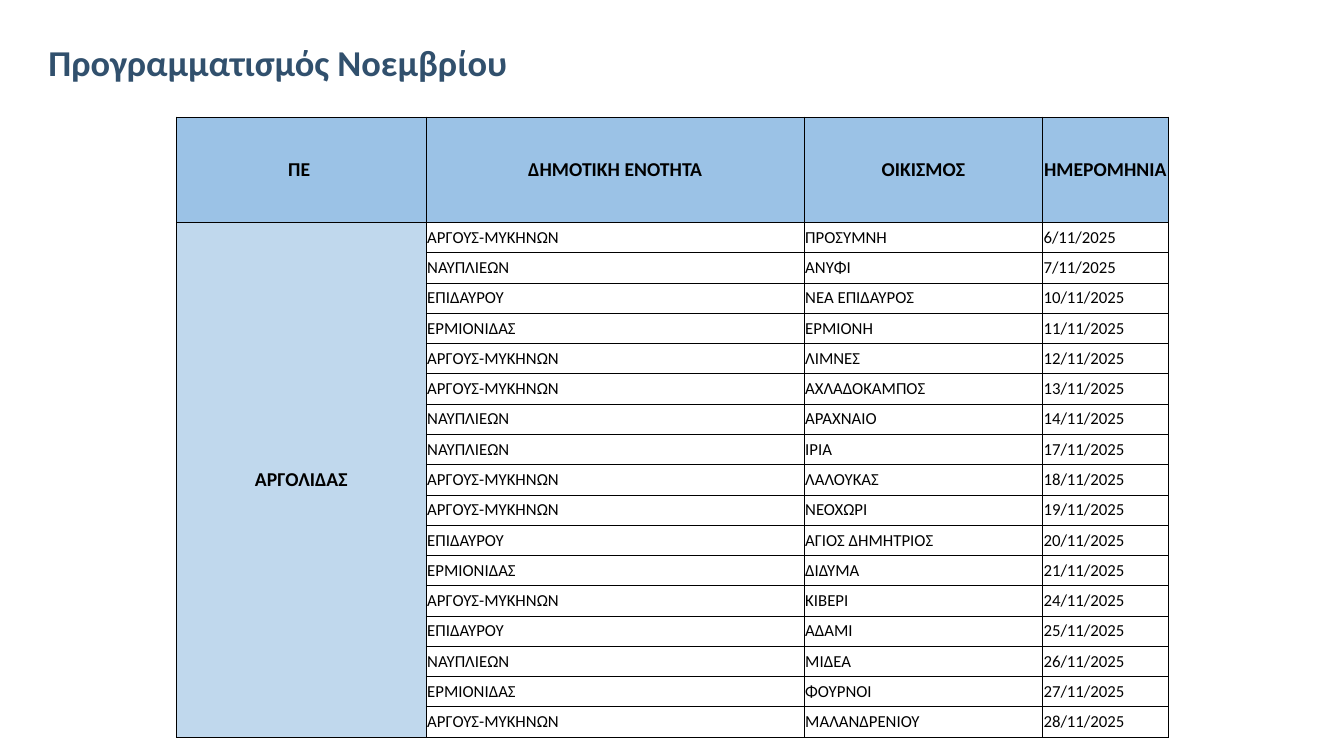
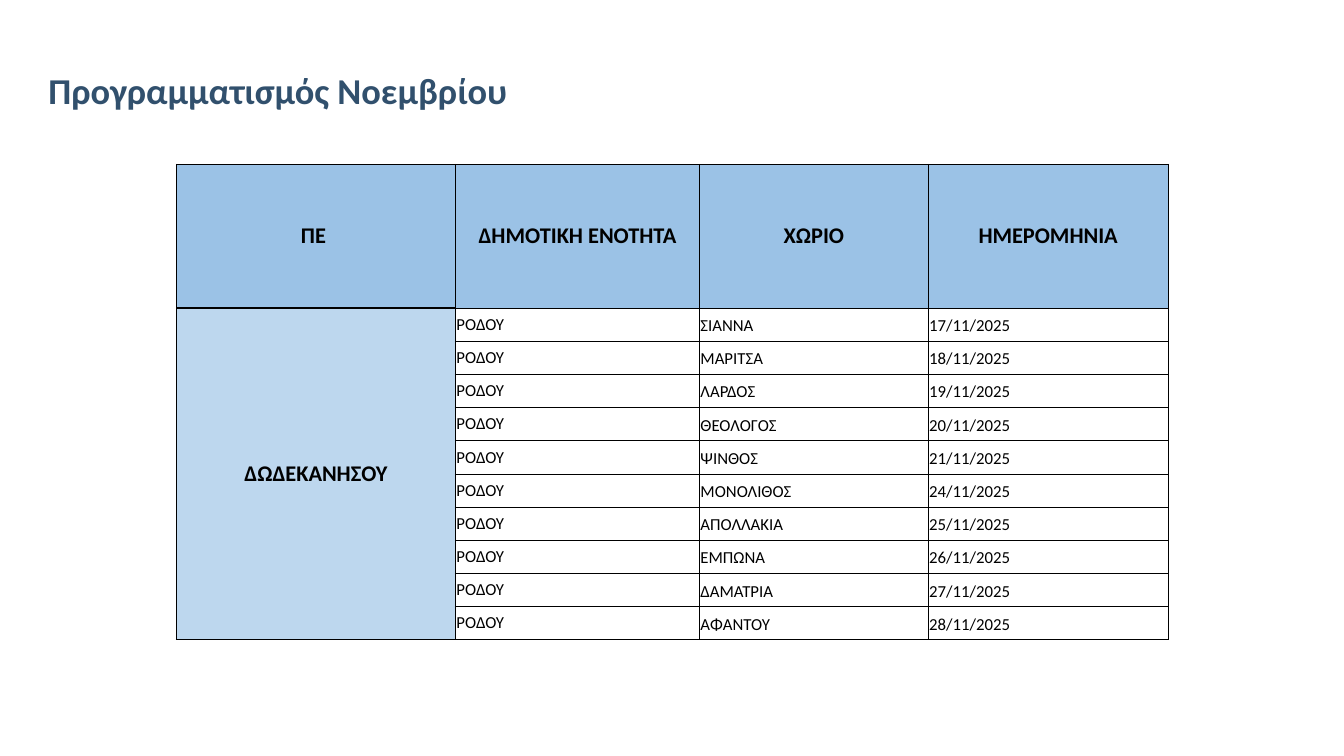
"""Build the two November schedule slides, each a title over a table."""
from pptx import Presentation
from pptx.dml.color import RGBColor
from pptx.enum.text import MSO_ANCHOR as Anchor, PP_ALIGN as Align
from pptx.oxml.ns import qn
from pptx.util import Pt
from lxml.etree import SubElement

NAVY = RGBColor(0x31, 0x50, 0x6D)
BLACK = RGBColor(0x00, 0x00, 0x00)
WHITE = RGBColor(0xFF, 0xFF, 0xFF)
HEADER_BLUE = RGBColor(0x9B, 0xC2, 0xE6)
ARGOLIDA_BLUE = RGBColor(0xC0, 0xD8, 0xED)
DODECANESE_BLUE = RGBColor(0xBD, 0xD7, 0xEE)

TITLE = "Προγραμματισμός Νοεμβρίου"
ARGOLIDA_VISITS = [
    ("ΑΡΓΟΥΣ-ΜΥΚΗΝΩΝ", "ΠΡΟΣΥΜΝΗ", "6/11/2025"),
    ("ΝΑΥΠΛΙΕΩΝ", "ΑΝΥΦΙ", "7/11/2025"),
    ("ΕΠΙΔΑΥΡΟΥ", "ΝΕΑ ΕΠΙΔΑΥΡΟΣ", "10/11/2025"),
    ("ΕΡΜΙΟΝΙΔΑΣ", "ΕΡΜΙΟΝΗ", "11/11/2025"),
    ("ΑΡΓΟΥΣ-ΜΥΚΗΝΩΝ", "ΛΙΜΝΕΣ", "12/11/2025"),
    ("ΑΡΓΟΥΣ-ΜΥΚΗΝΩΝ", "ΑΧΛΑΔΟΚΑΜΠΟΣ", "13/11/2025"),
    ("ΝΑΥΠΛΙΕΩΝ", "ΑΡΑΧΝΑΙΟ", "14/11/2025"),
    ("ΝΑΥΠΛΙΕΩΝ", "ΙΡΙΑ", "17/11/2025"),
    ("ΑΡΓΟΥΣ-ΜΥΚΗΝΩΝ", "ΛΑΛΟΥΚΑΣ", "18/11/2025"),
    ("ΑΡΓΟΥΣ-ΜΥΚΗΝΩΝ", "ΝΕΟΧΩΡΙ", "19/11/2025"),
    ("ΕΠΙΔΑΥΡΟΥ", "ΑΓΙΟΣ ΔΗΜΗΤΡΙΟΣ", "20/11/2025"),
    ("ΕΡΜΙΟΝΙΔΑΣ", "ΔΙΔΥΜΑ", "21/11/2025"),
    ("ΑΡΓΟΥΣ-ΜΥΚΗΝΩΝ", "ΚΙΒΕΡΙ", "24/11/2025"),
    ("ΕΠΙΔΑΥΡΟΥ", "ΑΔΑΜΙ", "25/11/2025"),
    ("ΝΑΥΠΛΙΕΩΝ", "ΜΙΔΕΑ", "26/11/2025"),
    ("ΕΡΜΙΟΝΙΔΑΣ", "ΦΟΥΡΝΟΙ", "27/11/2025"),
    ("ΑΡΓΟΥΣ-ΜΥΚΗΝΩΝ", "ΜΑΛΑΝΔΡΕΝΙΟΥ", "28/11/2025"),
]
RHODES_VISITS = [
    ("ΡΟΔΟΥ", village, f"{day}/11/2025")
    for village, day in [
        ("ΣΙΑΝΝΑ", 17), ("ΜΑΡΙΤΣΑ", 18), ("ΛΑΡΔΟΣ", 19), ("ΘΕΟΛΟΓΟΣ", 20),
        ("ΨΙΝΘΟΣ", 21), ("ΜΟΝΟΛΙΘΟΣ", 24), ("ΑΠΟΛΛΑΚΙΑ", 25),
        ("ΕΜΠΩΝΑ", 26), ("ΔΑΜΑΤΡΙΑ", 27), ("ΑΦΑΝΤΟΥ", 28),
    ]
]


def set_format(target, values):
    for name, value in values.items():
        setattr(target, name, value)


class Deck:
    """Hold the shared style and the slide being built."""

    font_name = "Calibri"
    title_insets = dict(margin_left=Pt(8.6), margin_right=Pt(7.2),
                        margin_top=Pt(3.6), margin_bottom=Pt(3.6))
    cell_insets = dict(margin_left=Pt(0.7), margin_right=Pt(0.7),
                       margin_top=Pt(3.6), margin_bottom=Pt(3.6))
    thin, thick = Pt(0.5), Pt(0.96)

    def __init__(self):
        self.presentation = Presentation()
        set_format(self.presentation, dict(slide_width=Pt(960), slide_height=Pt(540)))
        self.slide = None

    def add_slide(self):
        blank = self.presentation.slide_layouts[6]
        self.slide = self.presentation.slides.add_slide(blank)

    def fill_paragraph(self, paragraph, text, size, bold, color=BLACK):
        paragraph.text = text
        set_format(paragraph.font, dict(name=self.font_name, size=Pt(size), bold=bold))
        paragraph.font.color.rgb = color

    def title(self, text, height):
        shape = self.slide.shapes.add_textbox(Pt(26), Pt(18), Pt(893), Pt(height))
        frame = shape.text_frame
        set_format(frame, dict(word_wrap=True, vertical_anchor=Anchor.BOTTOM,
                               **self.title_insets))
        paragraph = frame.paragraphs[0]
        paragraph.line_spacing = 0.9
        self.fill_paragraph(paragraph, text, 26, True, NAVY)

    def borders(self, cell, thick_sides):
        properties = cell._tc.get_or_add_tcPr()
        for side in "LRTB":
            width = self.thick if side in thick_sides else self.thin
            line = SubElement(properties, qn(f"a:ln{side}"), w=str(width))
            fill = SubElement(line, qn("a:solidFill"))
            SubElement(fill, qn("a:srgbClr"), val=str(BLACK))

    def cell(self, cell, text, fill, size=12, heading=False,
             anchor=Anchor.MIDDLE, thick_sides=""):
        self.borders(cell, thick_sides)
        cell.fill.solid()
        cell.fill.fore_color.rgb = fill
        set_format(cell, dict(vertical_anchor=anchor, **self.cell_insets))
        paragraph = cell.text_frame.paragraphs[0]
        paragraph.alignment = Align.CENTER if heading else Align.LEFT
        self.fill_paragraph(paragraph, text, size, heading)

    def schedule(self, top, widths, header_height, row_height, headings, region,
                 visits, region_fill, heading_size, place_anchor=Anchor.MIDDLE,
                 framed=False):
        rows = len(visits) + 1
        frame = self.slide.shapes.add_table(
            rows, len(widths), Pt(126), Pt(top), Pt(sum(widths)),
            Pt(header_height + row_height * len(visits)))
        table = frame.table
        set_format(table, dict(first_row=False, horz_banding=False))
        for column, width in zip(table.columns, widths):
            column.width = Pt(width)
        for index, row in enumerate(table.rows):
            row.height = Pt(row_height if index else header_height)
        for column, text in enumerate(headings):
            self.cell(table.cell(0, column), text, HEADER_BLUE, heading_size, True,
                      thick_sides="B" if framed and column == 0 else "")
        for row, visit in enumerate(visits, 1):
            self.cell(table.cell(row, 0), region if row == 1 else "", region_fill,
                      heading_size, True, thick_sides="LRTB" if framed else "")
            for column, text in enumerate(visit, 1):
                first = column == 1
                self.cell(table.cell(row, column), text, WHITE,
                          anchor=Anchor.MIDDLE if first else place_anchor,
                          thick_sides="L" if framed and first else "")
        table.cell(1, 0).merge(table.cell(rows - 1, 0))


def main():
    deck = Deck()

    deck.add_slide()
    deck.title(TITLE, 46)
    deck.schedule(83.5, [178.5, 270, 170.2, 89.8], 75.3, 18.2,
                  ["ΠΕ ", "ΔΗΜΟΤΙΚΗ ΕΝΟΤΗΤΑ", "ΟΙΚΙΣΜΟΣ", "ΗΜΕΡΟΜΗΝΙΑ"],
                  "ΑΡΓΟΛΙΔΑΣ", ARGOLIDA_VISITS, ARGOLIDA_BLUE, 14)

    deck.add_slide()
    deck.title(TITLE, 65.7)
    deck.schedule(117.2, [199.4, 174.3, 163.4, 171.4], 102.8, 23.7,
                  ["ΠΕ ", "ΔΗΜΟΤΙΚΗ ΕΝΟΤΗΤΑ", "ΧΩΡΙΟ", "ΗΜΕΡΟΜΗΝΙΑ"],
                  "ΔΩΔΕΚΑΝΗΣΟΥ", RHODES_VISITS, DODECANESE_BLUE, 16,
                  place_anchor=Anchor.BOTTOM, framed=True)

    deck.presentation.save("out.pptx")


if __name__ == "__main__":
    main()
